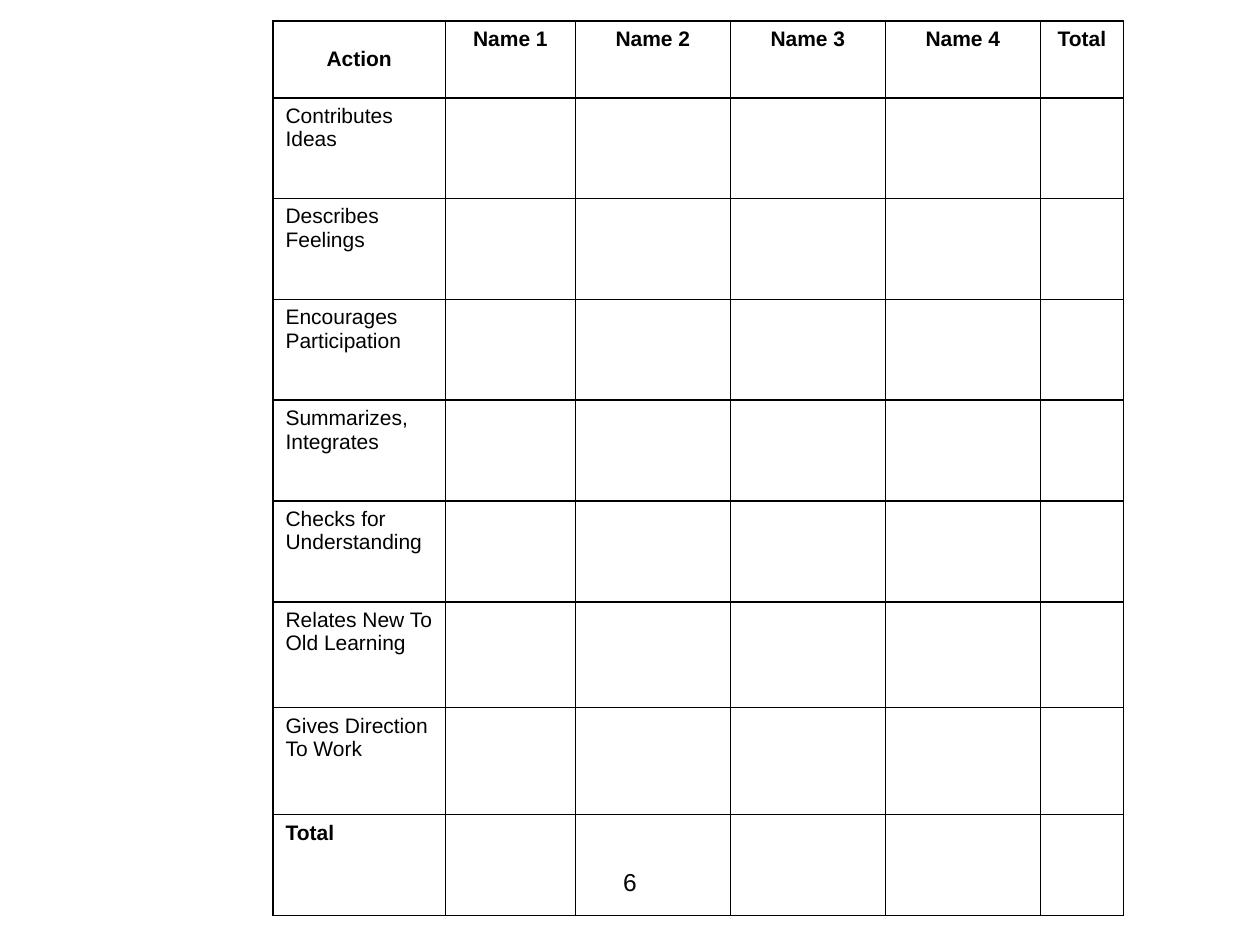
from dataclasses import dataclass

from lxml.etree import SubElement
from pptx import Presentation
from pptx.dml.color import RGBColor
from pptx.enum.text import MSO_ANCHOR, PP_ALIGN
from pptx.oxml.ns import qn
from pptx.util import Pt


@dataclass(frozen=True)
class Theme:
    font: str = "Arial"
    ink: str = "000000"
    body: int = 12
    page: int = 14
    line: int = 1


THEME = Theme()

HEADS = ["Action", "Name 1", "Name 2", "Name 3", "Name 4", "Total"]
ACTIONS = [
    "Contributes Ideas",
    "Describes\nFeelings",
    "Encourages\nParticipation",
    "Summarizes, Integrates",
    "Checks for\nUnderstanding",
    "Relates New To Old Learning",
    "Gives Direction To Work",
]
WIDTHS = [98.6, 74.2, 88.6, 88.6, 88.6, 47.5]
HEIGHTS = [43.9] + [57.6] * 5 + [60.5, 61.2, 57.6]


def style(frame, size, bold=False, align=PP_ALIGN.LEFT):
    """Format every paragraph and run of a text frame."""
    for para in frame.paragraphs:
        para.alignment = align
        for run in para.runs:
            font = run.font
            font.name = THEME.font
            font.size = Pt(size)
            font.bold = bold
            font.color.rgb = RGBColor.from_string(THEME.ink)


def border(cell):
    """Draw a solid line on all four sides of a cell."""
    props = cell._tc.get_or_add_tcPr()
    for side in ("a:lnL", "a:lnR", "a:lnT", "a:lnB"):
        line = SubElement(props, qn(side), w=str(Pt(THEME.line)))
        fill = SubElement(line, qn("a:solidFill"))
        SubElement(fill, qn("a:srgbClr"), val=THEME.ink)


def add_page(slide, text):
    box = slide.shapes.add_textbox(Pt(246), Pt(492), Pt(228), Pt(36))
    frame = box.text_frame
    frame.word_wrap = True
    frame.text = text
    style(frame, THEME.page, align=PP_ALIGN.CENTER)


def add_grid(slide):
    shape = slide.shapes.add_table(
        len(HEIGHTS), len(WIDTHS), Pt(156), Pt(12),
        Pt(sum(WIDTHS)), Pt(sum(HEIGHTS)))
    table = shape.table
    table.first_row = table.horz_banding = False
    for col, width in zip(table.columns, WIDTHS):
        col.width = Pt(width)
    for row, height in zip(table.rows, HEIGHTS):
        row.height = Pt(height)

    # Open cells with a full border
    for cell in table.iter_cells():
        border(cell)
        cell.fill.background()

    # Heading row
    for col, text in enumerate(HEADS):
        cell = table.cell(0, col)
        cell.text_frame.text = text
        style(cell.text_frame, THEME.body, True, PP_ALIGN.CENTER)
    table.cell(0, 0).vertical_anchor = MSO_ANCHOR.MIDDLE

    # Action column, closed by the total
    for row, text in enumerate(ACTIONS + ["Total"], 1):
        frame = table.cell(row, 0).text_frame
        frame.text = text
        style(frame, THEME.body, bold=text == "Total")


def main():
    deck = Presentation()
    deck.slide_width, deck.slide_height = Pt(720), Pt(540)
    slide = deck.slides.add_slide(deck.slide_layouts[6])
    add_page(slide, "6")
    add_grid(slide)
    deck.save("out.pptx")


if __name__ == "__main__":
    main()
